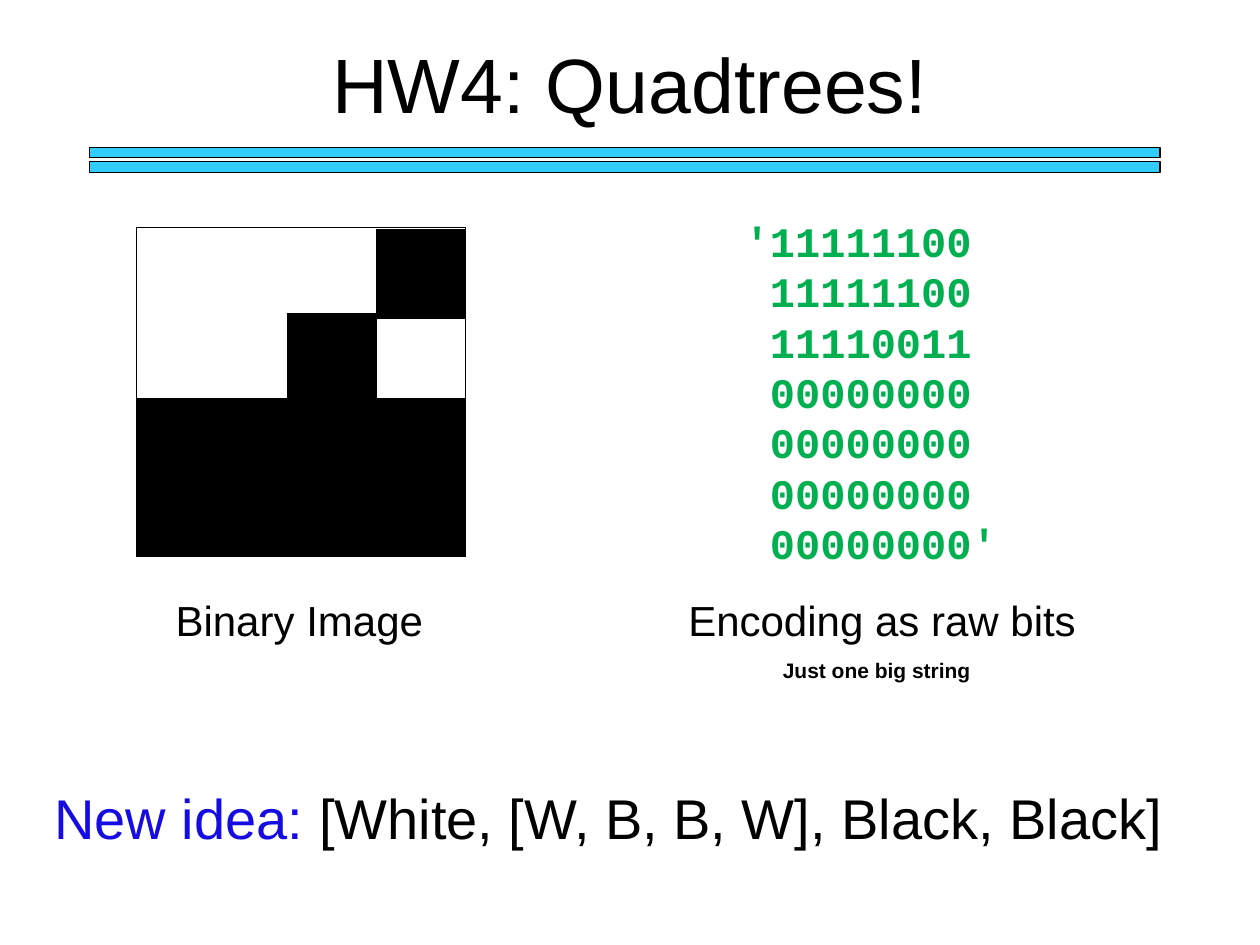
"""Build the quadtree homework slide: a binary image beside its raw bits."""
from collections import namedtuple
from pptx import Presentation
from pptx.dml.color import RGBColor
from pptx.enum.shapes import MSO_SHAPE
from pptx.enum.text import MSO_ANCHOR, PP_ALIGN
from pptx.util import Pt

RECT = MSO_SHAPE.RECTANGLE
LEFT, MID = PP_ALIGN.LEFT, PP_ALIGN.CENTER
TOP, HALF = MSO_ANCHOR.TOP, MSO_ANCHOR.MIDDLE

Theme = namedtuple("Theme", "sans mono black blue green sky title idea body note")
theme = Theme("Arial", "Courier New", "000000", "160CE3", "00B050", "33CCFF",
              44, 32, 24, 12)

deck = Presentation()
deck.slide_width, deck.slide_height = Pt(720), Pt(540)
slide = deck.slides.add_slide(deck.slide_layouts[6])


def add_text(lines, box, size, font=theme.sans, color=theme.black,
             bold=False, align=MID, anchor=TOP):
    """Add lines of text; a line is a string or a list of (text, color) runs."""
    frame = slide.shapes.add_textbox(*map(Pt, box)).text_frame
    frame.word_wrap = True
    frame.vertical_anchor = anchor
    for row, line in enumerate(lines):
        para = frame.add_paragraph() if row else frame.paragraphs[0]
        para.alignment = align
        runs = [(line, color)] if isinstance(line, str) else line
        for words, tint in runs:
            run = para.add_run()
            run.text = words
            run.font.name, run.font.size, run.font.bold = font, Pt(size), bold
            run.font.color.rgb = RGBColor.from_string(tint)


def add_rect(box, fill=None):
    """Add a thin-lined rectangle, hollow unless a fill is given."""
    rect = slide.shapes.add_shape(RECT, *map(Pt, box))
    rect.shadow.inherit = False
    rect.line.width = Pt(0.75)
    rect.line.color.rgb = RGBColor.from_string(theme.black)
    if fill:
        rect.fill.solid()
        rect.fill.fore_color.rgb = RGBColor.from_string(fill)
    else:
        rect.fill.background()


bits = ["11111100", "11111100", "11110011"] + ["00000000"] * 4
lines = [" " + row for row in bits]
lines[0] = "'" + bits[0]
lines[-1] += "'"
add_text(lines, (418.5, 119.5, 188, 211), theme.body, font=theme.mono,
         color=theme.green, bold=True, align=LEFT)

for top in (84.25, 92.5):
    add_rect((51, top, 612, 6), theme.sky)

side, cell = 188, 50.75
left, top = 78, 130
edge = left + side
add_rect((left, top, side, side))
add_rect((left, 228, side, 90), theme.black)
add_rect((edge - cell, 131, cell, cell), theme.black)
add_rect((edge - 2 * cell, 179, cell, cell), theme.black)

add_text(["Binary Image"], (90, 336, 162, 36), theme.body)
add_text(["Encoding as raw bits"], (366, 336, 276, 36), theme.body)
add_text(["Just one big string"], (414, 372, 174, 22), theme.note, bold=True)

idea = [("New idea: ", theme.blue),
        ("[White, [W, B, B, W], Black, Black]", theme.black)]
add_text([idea], (24, 444, 666, 46), theme.idea, align=LEFT)
add_text(["HW4: Quadtrees!"], (54, 11, 612, 72), theme.title, anchor=HALF)

deck.save("out.pptx")
